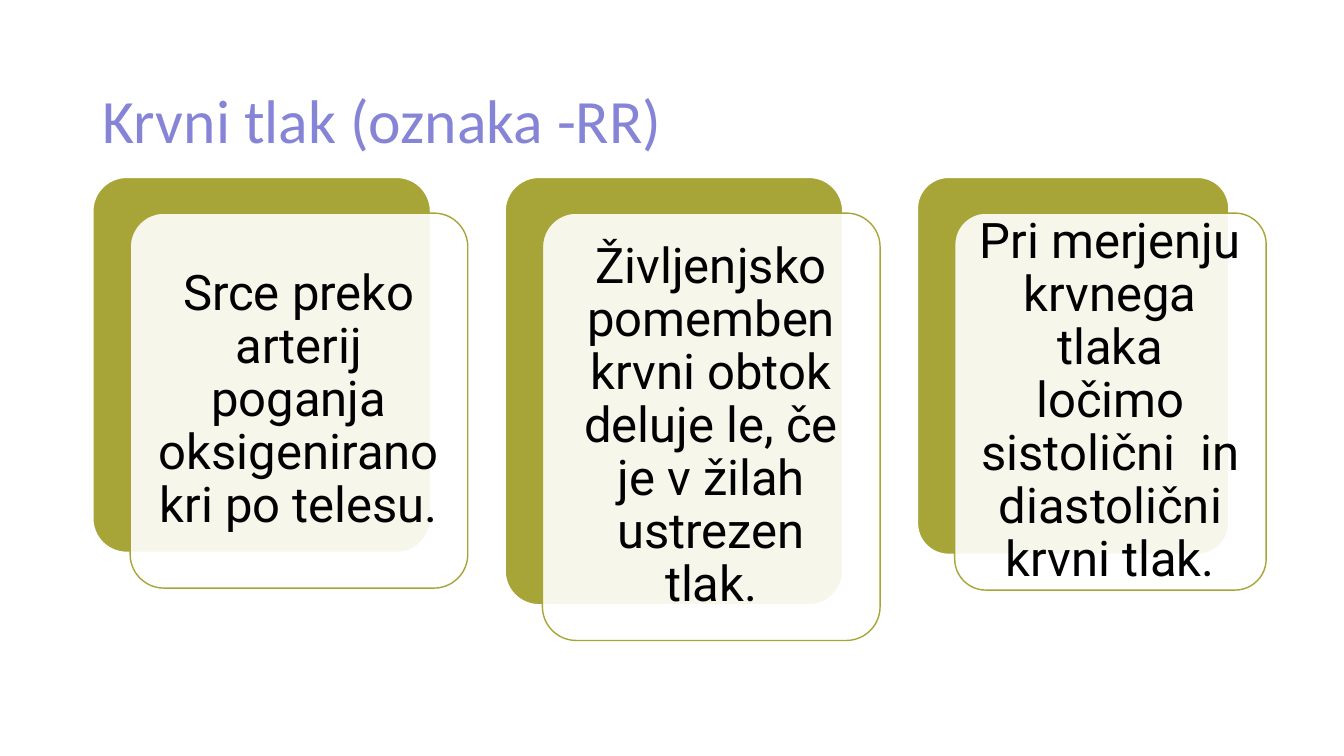
from pptx import Presentation
from pptx.dml.color import RGBColor
from pptx.enum.shapes import MSO_SHAPE
from pptx.enum.text import MSO_ANCHOR, PP_ALIGN
from pptx.oxml.ns import qn
from pptx.util import Cm, Pt
from lxml import etree

ROUNDED = MSO_SHAPE.ROUNDED_RECTANGLE
MIDDLE = MSO_ANCHOR.MIDDLE
LEFT, CENTER = PP_ALIGN.LEFT, PP_ALIGN.CENTER

LILAC = RGBColor(0x86, 0x84, 0xD6)
OLIVE = RGBColor(0xA8, 0xA5, 0x38)
WHITE = RGBColor(0xFF, 0xFF, 0xFF)
BLACK = RGBColor(0x00, 0x00, 0x00)

# Width and height in cm, then the text
CARDS = [
    (8.51, 9.45, "Srce preko arterij poganja oksigenirano kri po telesu."),
    (8.51, 10.77, "Življenjsko pomemben krvni obtok deluje le, če je v žilah ustrezen tlak."),
    (7.85, 9.5, "Pri merjenju krvnega tlaka ločimo sistolični  in diastolični krvni tlak."),
]
CARD_LEFT, CARD_TOP, CARD_STEP = 2.34, 4.47, 10.39
SHIFT_X, SHIFT_Y = 0.94, 0.9


def add_panel(left, top, width, height, fill, line):
    sp = s.shapes.add_shape(ROUNDED, Cm(left), Cm(top), Cm(width), Cm(height))
    sp.adjustments[0] = 0.1
    sp.shadow.inherit = False
    sp.fill.solid()
    sp.fill.fore_color.rgb = fill
    sp.line.color.rgb = line
    sp.line.width = Pt(1)
    return sp


def format_text(tf, font, size, color, align):
    tf.word_wrap = True
    tf.vertical_anchor = MIDDLE
    p = tf.paragraphs[0]
    p.alignment = align
    p.line_spacing = 0.9
    p.font.name = font
    p.font.size = Pt(size)
    p.font.color.rgb = color


prs = Presentation()
prs.slide_width, prs.slide_height = Cm(33.87), Cm(19.05)
s = prs.slides.add_slide(prs.slide_layouts[5])

# Title
title = s.shapes.title
title.left, title.top, title.width, title.height = Cm(2.34), Cm(1.7), Cm(29.21), Cm(2.82)
title.text_frame.text = "Krvni tlak (oznaka -RR)"
format_text(title.text_frame, "Calibri", 44, LILAC, LEFT)

# Cards: an olive back panel and a shifted translucent front panel with text
for i, (width, height, text) in enumerate(CARDS):
    left = CARD_LEFT + i * CARD_STEP
    add_panel(left, CARD_TOP, width, height, OLIVE, WHITE)
    front = add_panel(left + SHIFT_X, CARD_TOP + SHIFT_Y, width, height, WHITE, OLIVE)
    color = front.fill._xPr.find(qn("a:solidFill"))[0]
    etree.SubElement(color, qn("a:alpha")).set("val", "90000")

    tf = front.text_frame
    tf.margin_left = tf.margin_right = tf.margin_top = tf.margin_bottom = Cm(0.38)
    tf.text = text
    format_text(tf, "Roboto", 35, BLACK, CENTER)

prs.save("out.pptx")
